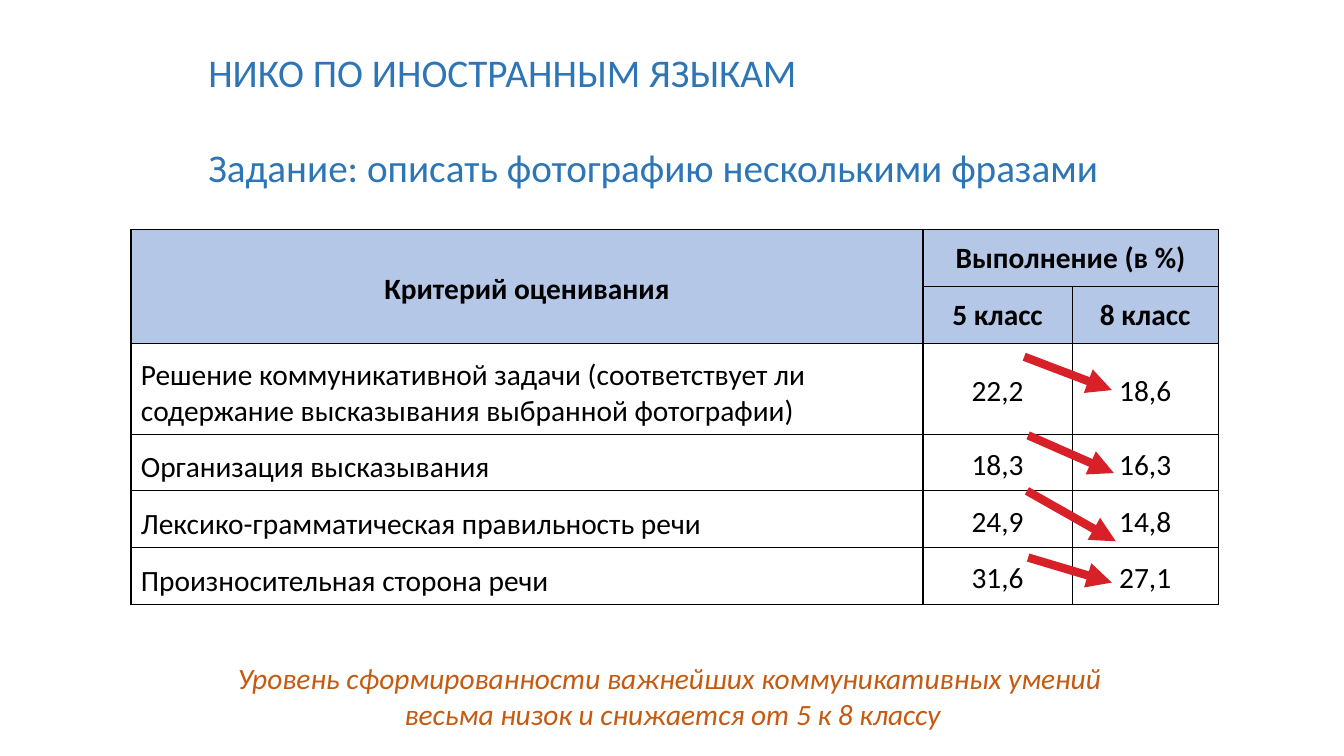
from dataclasses import dataclass

from lxml.etree import SubElement
from pptx import Presentation
from pptx.dml.color import RGBColor
from pptx.enum.shapes import MSO_CONNECTOR as Connector
from pptx.enum.text import MSO_ANCHOR as Anchor, PP_ALIGN as Align
from pptx.oxml import parse_xml
from pptx.oxml.ns import nsdecls, qn
from pptx.util import Cm, Pt


@dataclass(frozen=True)
class Theme:
    """Colours, font and type sizes of the slide."""
    font: str = "Calibri"
    title: str = "2E75B6"
    text: str = "000000"
    header: str = "B4C7E7"
    conclusion: str = "C55A11"
    arrow: str = "D82028"
    title_size: int = 28
    body_size: int = 21
    border_width: int = 1
    arrow_width: int = 6


THEME = Theme()
TITLE = ["НИКО ПО ИНОСТРАННЫМ ЯЗЫКАМ", "Задание: описать фотографию несколькими фразами"]
CONCLUSION = ("Уровень сформированности важнейших коммуникативных умений \n"
              "весьма низок и снижается от 5 к 8 классу")
HEADER_ROWS = 2
RESULTS = [
    ["Критерий оценивания", "Выполнение (в %)", ""],
    ["", "5 класс", "8 класс"],
    ["Решение коммуникативной задачи (соответствует ли "
     "содержание высказывания выбранной фотографии)", "22,2", "18,6"],
    ["Организация высказывания", "18,3", "16,3"],
    ["Лексико-грамматическая правильность речи", "24,9", "14,8"],
    ["Произносительная сторона речи", "31,6", "27,1"],
]
COLUMN_WIDTHS = [19.96, 3.76, 3.68]
ROW_HEIGHTS = [1.43, 1.43, 2.29, 1.43, 1.43, 1.43]
TALL_ROW = 2
DECLINES = [
    (25.81, 8.99, 28.02, 9.83),
    (25.91, 10.97, 28.07, 11.92),
    (25.88, 12.37, 28.12, 13.64),
    (25.91, 14.05, 28.02, 14.68),
]


def style_font(paragraph, size, color, bold=False, italic=False):
    """Set the font of a whole paragraph."""
    font = paragraph.font
    font.name, font.size = THEME.font, Pt(size)
    font.bold, font.italic = bold, italic
    font.color.rgb = RGBColor.from_string(color)


def add_text(slide, box, lines, size, color, align=Align.LEFT, italic=False, gap=0, insets=(0.25, 0.13)):
    """Add a wrapped text box with one paragraph per line."""
    frame = slide.shapes.add_textbox(*map(Cm, box)).text_frame
    frame.word_wrap = True
    frame.margin_left = frame.margin_right = Cm(insets[0])
    frame.margin_top = frame.margin_bottom = Cm(insets[1])
    for index, line in enumerate(lines):
        paragraph = frame.add_paragraph() if index else frame.paragraphs[0]
        paragraph.text = line
        paragraph.alignment = align
        if index:
            paragraph.space_before = Pt(gap)
        style_font(paragraph, size, color, italic=italic)


def set_borders(cell):
    """Draw solid borders on all four sides of a cell."""
    properties = cell._tc.get_or_add_tcPr()
    for position, side in enumerate(("lnL", "lnR", "lnT", "lnB")):
        properties.insert(position, parse_xml(
            f'<a:{side} {nsdecls("a")} w="{Pt(THEME.border_width)}"><a:solidFill>'
            f'<a:srgbClr val="{THEME.text}"/></a:solidFill></a:{side}>'))


def fill_cell(cell, text, row, column):
    """Write and style one cell according to its place in the table."""
    is_header = row < HEADER_ROWS
    is_criterion = column == 0 and not is_header
    cell.margin_left = cell.margin_right = Cm(0.25)
    cell.margin_top = cell.margin_bottom = Cm(0.13)
    if is_criterion:
        cell.vertical_anchor = Anchor.BOTTOM
    elif is_header and column > 0:
        cell.vertical_anchor = Anchor.TOP
    else:
        cell.vertical_anchor = Anchor.MIDDLE
    if is_header:
        cell.fill.solid()
        cell.fill.fore_color.rgb = RGBColor.from_string(THEME.header)
    else:
        cell.fill.background()
    set_borders(cell)
    paragraph = cell.text_frame.paragraphs[0]
    paragraph.text = text
    paragraph.alignment = Align.LEFT if is_criterion else Align.CENTER
    paragraph.line_spacing = 1.0 if is_criterion and row == TALL_ROW else 1.15
    style_font(paragraph, THEME.body_size, THEME.text, bold=is_header)


def add_results_table(slide, left, top):
    """Add the table of criteria and results for both grades."""
    table = slide.shapes.add_table(
        len(ROW_HEIGHTS), len(COLUMN_WIDTHS), Cm(left), Cm(top),
        Cm(sum(COLUMN_WIDTHS)), Cm(sum(ROW_HEIGHTS))).table
    table.first_row = table.horz_banding = False
    for column, width in zip(table.columns, COLUMN_WIDTHS):
        column.width = Cm(width)
    for row, height in zip(table.rows, ROW_HEIGHTS):
        row.height = Cm(height)
    for row, texts in enumerate(RESULTS):
        for column, text in enumerate(texts):
            fill_cell(table.cell(row, column), text, row, column)
    table.cell(0, 0).merge(table.cell(1, 0))
    table.cell(0, 1).merge(table.cell(0, 2))


def add_arrow(slide, points):
    """Add a straight arrow showing a decline."""
    arrow = slide.shapes.add_connector(Connector.STRAIGHT, *map(Cm, points))
    arrow.line.color.rgb = RGBColor.from_string(THEME.arrow)
    arrow.line.width = Pt(THEME.arrow_width)
    SubElement(arrow.line._get_or_add_ln(), qn("a:tailEnd"), type="triangle")
    SubElement(arrow._element.spPr, qn("a:effectLst"))


def main():
    """Build the slide and save the presentation."""
    presentation = Presentation()
    presentation.slide_width, presentation.slide_height = Cm(33.87), Cm(19.05)
    slide = presentation.slides.add_slide(presentation.slide_layouts[6])
    add_text(slide, (5, 1.09, 25.78, 3.84), TITLE, THEME.title_size, THEME.title, gap=34)
    add_results_table(slide, 3.3, 5.79)
    add_text(slide, (1.4, 16.46, 31.11, 2.13), [CONCLUSION], THEME.body_size, THEME.conclusion,
             align=Align.CENTER, italic=True, insets=(0.33, 0.18))
    for points in DECLINES:
        add_arrow(slide, points)
    presentation.save("out.pptx")


if __name__ == "__main__":
    main()
